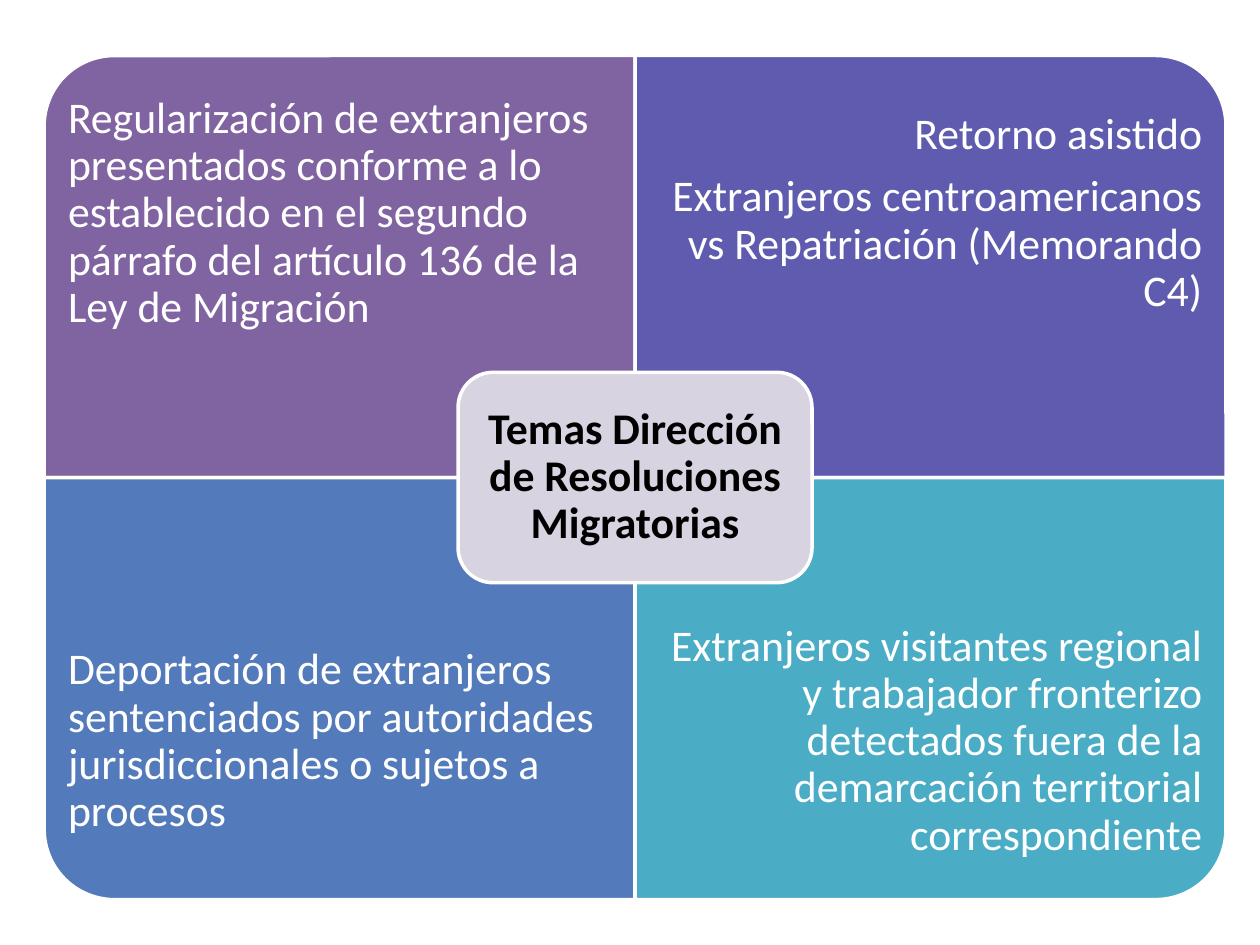
from pptx import Presentation
from pptx.dml.color import RGBColor
from pptx.enum import shapes, text
from pptx.util import Inches, Pt

WHITE = RGBColor(0xFF, 0xFF, 0xFF)
BLACK = RGBColor(0x00, 0x00, 0x00)
PURPLE = RGBColor(0x80, 0x64, 0xA2)
INDIGO = RGBColor(0x5F, 0x5B, 0xAE)
BLUE = RGBColor(0x53, 0x7A, 0xBA)
TEAL = RGBColor(0x4B, 0xAC, 0xC6)
LILAC = RGBColor(0xD8, 0xD3, 0xE0)

LEFT, RIGHT, CENTER = text.PP_ALIGN.LEFT, text.PP_ALIGN.RIGHT, text.PP_ALIGN.CENTER

# column, row, rotation that turns the round corner outwards, fill, paragraphs
QUADRANTS = [
    (0, 0, 270, PURPLE, ["Regularización de extranjeros presentados conforme a lo establecido "
                         "en el segundo párrafo del artículo 136 de la Ley de Migración"]),
    (1, 0, 0, INDIGO, ["Retorno asistido",
                       "Extranjeros centroamericanos vs Repatriación (Memorando C4)"]),
    (0, 1, 180, BLUE, ["Deportación de extranjeros sentenciados por autoridades "
                       "jurisdiccionales o sujetos a procesos"]),
    (1, 1, 90, TEAL, ["Extranjeros visitantes regional y trabajador fronterizo detectados "
                      "fuera de la demarcación territorial correspondiente"]),
]
TOPIC = ["Temas Dirección de Resoluciones Migratorias"]

GRID_LEFT, GRID_TOP = 0.35, 0.44
CELL_WIDTH, CELL_HEIGHT = 4.69, 3.35
TEXT_HEIGHT = 2.51
TOPIC_WIDTH, TOPIC_HEIGHT = 2.81, 1.67
TOPIC_INSET = 0.08


def add_panel(slide, kind, center_x, center_y, width, height, fill, rotation=0):
    """Add a filled, white-edged shape around a centre; size is as seen after rotation."""
    if rotation % 180:
        width, height = height, width
    panel = slide.shapes.add_shape(
        kind, Inches(center_x - width / 2), Inches(center_y - height / 2),
        Inches(width), Inches(height))
    panel.rotation = rotation
    panel.shadow.inherit = False
    panel.fill.solid()
    panel.fill.fore_color.rgb = fill
    panel.line.color.rgb = WHITE
    panel.line.width = Pt(2)


def add_text(slide, paragraphs, left, top, width, height,
             align=LEFT, color=WHITE, bold=False, margin=0.19):
    box = slide.shapes.add_textbox(Inches(left), Inches(top), Inches(width), Inches(height))
    frame = box.text_frame
    frame.word_wrap = True
    frame.vertical_anchor = text.MSO_ANCHOR.MIDDLE
    frame.margin_left = frame.margin_right = Inches(margin)
    frame.margin_top = frame.margin_bottom = Inches(margin)
    for index, words in enumerate(paragraphs):
        para = frame.add_paragraph() if index else frame.paragraphs[0]
        para.alignment = align
        para.line_spacing = 0.9
        para.space_after = Pt(8.75)
        span = para.add_run()
        span.text = words
        span.font.name = "Calibri"
        span.font.size = Pt(25)
        span.font.bold = bold
        span.font.color.rgb = color


def main():
    deck = Presentation()
    deck.slide_width, deck.slide_height = Inches(10), Inches(7.5)
    slide = deck.slides.add_slide(deck.slide_layouts[6])

    for column, row, rotation, fill, paragraphs in QUADRANTS:
        left = GRID_LEFT + column * CELL_WIDTH
        top = GRID_TOP + row * CELL_HEIGHT
        add_panel(slide, shapes.MSO_SHAPE.ROUND_1_RECTANGLE,
                  left + CELL_WIDTH / 2, top + CELL_HEIGHT / 2,
                  CELL_WIDTH, CELL_HEIGHT, fill, rotation)
        text_top = top + row * (CELL_HEIGHT - TEXT_HEIGHT)
        add_text(slide, paragraphs, left, text_top, CELL_WIDTH, TEXT_HEIGHT,
                 align=RIGHT if column else LEFT)

    center_x, center_y = GRID_LEFT + CELL_WIDTH, GRID_TOP + CELL_HEIGHT
    add_panel(slide, shapes.MSO_SHAPE.ROUNDED_RECTANGLE, center_x, center_y,
              TOPIC_WIDTH, TOPIC_HEIGHT, LILAC)
    width, height = TOPIC_WIDTH - 2 * TOPIC_INSET, TOPIC_HEIGHT - 2 * TOPIC_INSET
    add_text(slide, TOPIC, center_x - width / 2, center_y - height / 2, width, height,
             align=CENTER, color=BLACK, bold=True, margin=0.1)

    deck.save("out.pptx")


if __name__ == "__main__":
    main()
